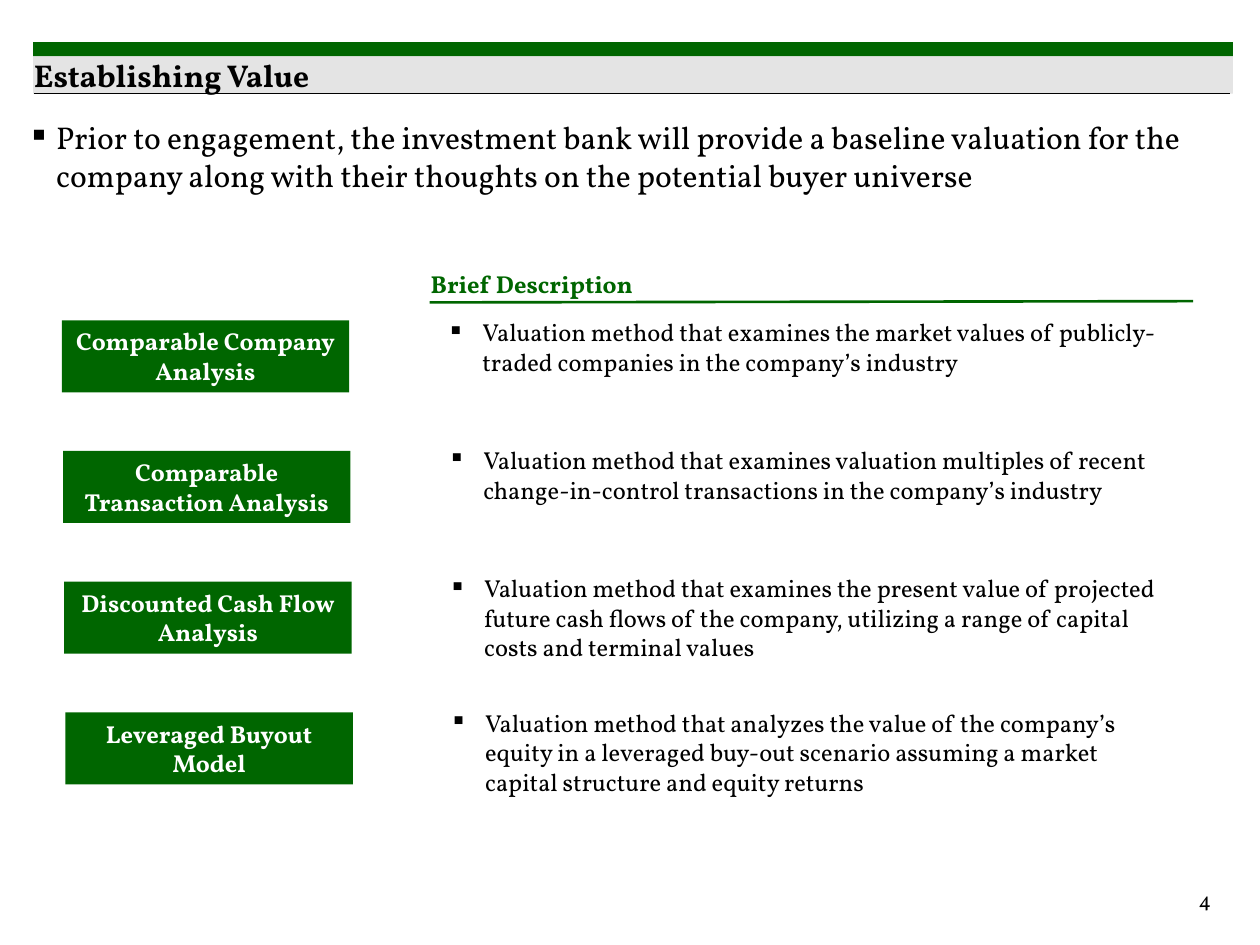
"""Build the Establishing Value slide with four valuation methods."""
from lxml.etree import SubElement
from pptx import Presentation
from pptx.dml.color import RGBColor
from pptx.enum.shapes import MSO_CONNECTOR as Connector, MSO_SHAPE as Shape
from pptx.enum.text import MSO_ANCHOR as Anchor, MSO_AUTO_SIZE as AutoSize, PP_ALIGN as Align
from pptx.oxml.ns import qn
from pptx.util import Pt

GREEN, GRAY, BLACK, WHITE = "006600", "E4E4E4", "000000", "FFFFFF"
color = RGBColor.from_string


def write(box, text, size, ink=BLACK, bold=False, align=Align.LEFT, indent=0):
    frame = box.text_frame
    layout = {"word_wrap": True, "auto_size": AutoSize.NONE, "vertical_anchor": Anchor.TOP,
              "margin_left": Pt(7.2), "margin_right": Pt(7.2),
              "margin_top": Pt(3.6), "margin_bottom": Pt(3.6)}
    for name, value in layout.items():
        setattr(frame, name, value)
    para = frame.paragraphs[0]
    para.alignment = align
    para.space_before = Pt(0)
    if indent:
        props = para._p.get_or_add_pPr()
        props.set("marL", str(Pt(indent)))
        props.set("indent", str(-Pt(indent)))
        SubElement(SubElement(props, qn("a:buClr")), qn("a:srgbClr"), val=BLACK)
        SubElement(props, qn("a:buSzPct"), val="55000")
        SubElement(props, qn("a:buChar"), char="■")
    span = para.add_run()
    span.text = text
    for name, value in {"name": "Vollkorn", "size": Pt(size), "bold": bold}.items():
        setattr(span.font, name, value)
    span.font.color.rgb = color(ink)


def add_block(left, top, width, height, fill):
    block = slide.shapes.add_shape(Shape.RECTANGLE, Pt(left), Pt(top), Pt(width), Pt(height))
    block.shadow.inherit = False
    block.fill.solid()
    block.fill.fore_color.rgb = color(fill)
    block.line.fill.background()
    return block


deck = Presentation()
deck.slide_width, deck.slide_height = Pt(720), Pt(540)
slide = deck.slides.add_slide(deck.slide_layouts[5])

add_block(19, 24, 685.5, 8.2, GREEN)
add_block(19, 32.2, 685.5, 21.3, GRAY)

title = slide.shapes.title
title_place = {"left": 12.2, "top": 28.3, "width": 550.8, "height": 28.8}
for name, value in title_place.items():
    setattr(title, name, Pt(value))
title._element.getparent().append(title._element)
write(title, "Establishing Value", 18, bold=True)

rules = [
    (19.4, 53.4, 702.7, 53.4, BLACK, 0.75),
    (245.5, 172.8, 681.8, 172.1, GREEN, 1.5),
]
for x1, y1, x2, y2, ink, weight in rules:
    rule = slide.shapes.add_connector(Connector.STRAIGHT, Pt(x1), Pt(y1), Pt(x2), Pt(y2))
    rule.line.color.rgb = color(ink)
    rule.line.width = Pt(weight)
    SubElement(rule._element.spPr, qn("a:effectLst"))

texts = [
    (11.5, 64, 684.7, 103,
     "Prior to engagement, the investment bank will provide a baseline valuation for the "
     "company along with their thoughts on the potential buyer universe",
     {"size": 18, "indent": 13.5}),
    (239, 150, 260.6, 24, "Brief Description", {"size": 14, "ink": GREEN, "bold": True}),
    (531.4, 503.3, 167.8, 24, "4", {"size": 12, "align": Align.RIGHT}),
]

methods = [
    ("Comparable Company Analysis", 177.8,
     "Valuation method that examines the market values of publicly-traded companies "
     "in the company’s industry"),
    ("Comparable Transaction Analysis", 250.8,
     "Valuation method that examines valuation multiples of recent change-in-control "
     "transactions in the company’s industry"),
    ("Discounted Cash Flow Analysis", 324,
     "Valuation method that examines the present value of projected future cash flows "
     "of the company, utilizing a range of capital costs and terminal values"),
    ("Leveraged Buyout Model", 401,
     "Valuation method that analyzes the value of the company’s equity in a leveraged "
     "buy-out scenario assuming a market capital structure and equity returns"),
]
for row, (method, top, description) in enumerate(methods):
    label = add_block(35.3 + 0.7 * row, 183 + 74.7 * row, 164.2, 41.2, GREEN)
    write(label, method, 14, WHITE, True, Align.CENTER)
    texts.append((250.6 + 0.5 * row, top, 427, 70, description, {"size": 14, "indent": 18}))

for left, top, width, height, text, style in texts:
    box = slide.shapes.add_textbox(Pt(left), Pt(top), Pt(width), Pt(height))
    write(box, text, **style)

deck.save("out.pptx")
